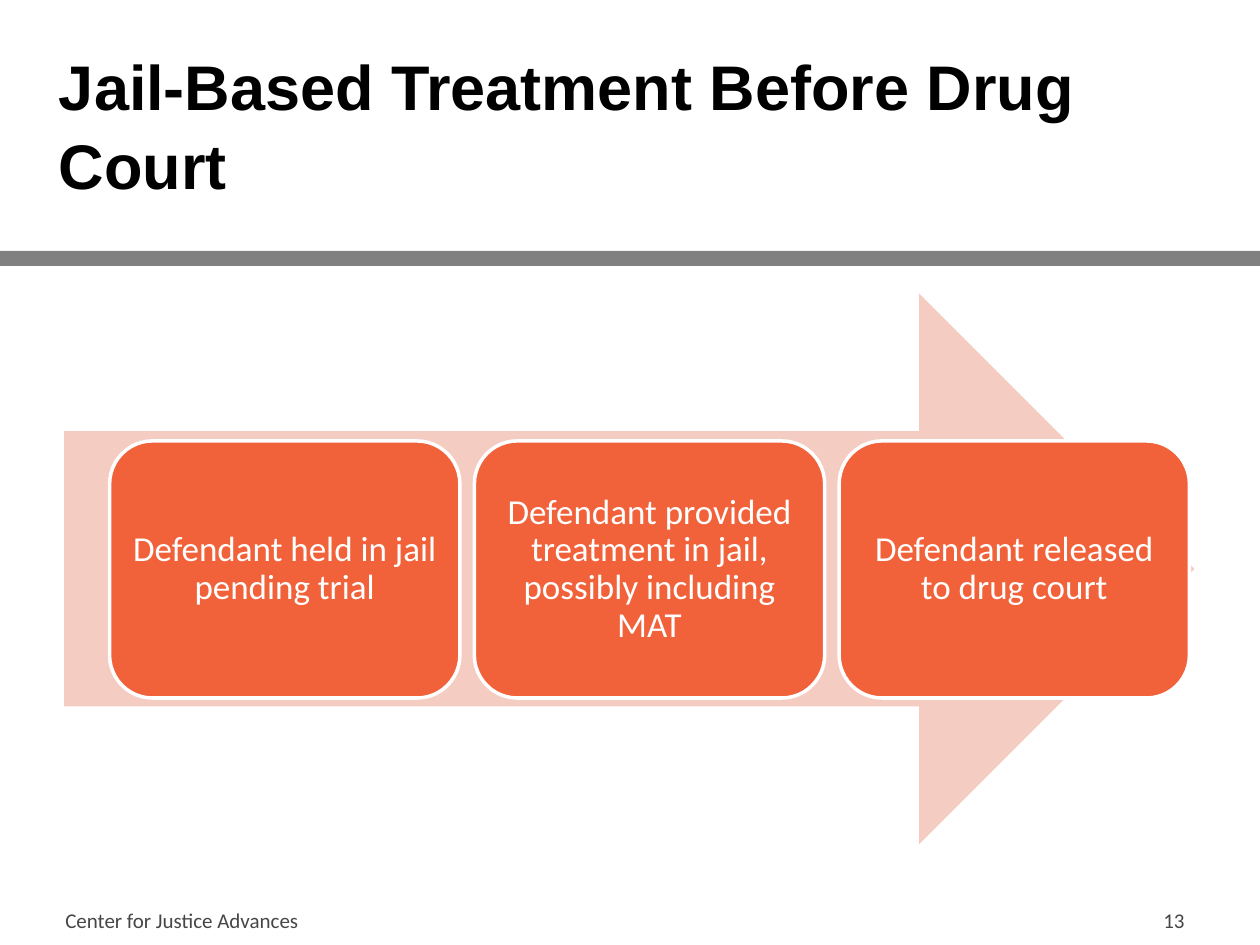
"""Build the slide on jail-based treatment before drug court."""
from pptx import Presentation
from pptx.dml.color import RGBColor
from pptx.enum import shapes, text
from pptx.util import Inches, Pt

BLACK = RGBColor(0x00, 0x00, 0x00)
WHITE = RGBColor(0xFF, 0xFF, 0xFF)
GRAY = RGBColor(0x80, 0x80, 0x80)
DARK = RGBColor(0x46, 0x46, 0x46)
ORANGE = RGBColor(0xF1, 0x62, 0x3A)
PINK = RGBColor(0xF4, 0xCC, 0xC2)

prs = Presentation()
prs.slide_width, prs.slide_height = Inches(10), Inches(7.5)
s = prs.slides.add_slide(prs.slide_layouts[6])


def add_shape(kind, x, y, w, h, fill):
    sp = s.shapes.add_shape(kind, Inches(x), Inches(y), Inches(w), Inches(h))
    sp.shadow.inherit = False
    sp.fill.solid()
    sp.fill.fore_color.rgb = fill
    sp.line.fill.background()
    return sp


def set_text(sp, words, size, color, align, font="Calibri", bold=False):
    tf = sp.text_frame
    tf.text = words
    tf.word_wrap = True
    tf.vertical_anchor = text.MSO_ANCHOR.MIDDLE
    p = tf.paragraphs[0]
    p.alignment = align
    r = p.runs[0]
    r.font.name, r.font.size, r.font.bold = font, Pt(size), bold
    r.font.color.rgb = color
    return tf


add_shape(shapes.MSO_SHAPE.RECTANGLE, 0, 1.99, 10, 0.12, GRAY)

title = s.shapes.add_textbox(Inches(0.37), Inches(0.3), Inches(9.26), Inches(1.45))
tf = set_text(title, "Jail-Based Treatment Before Drug Court", 36, BLACK,
              text.PP_ALIGN.LEFT, "Arial", True)
tf.margin_bottom = Inches(0.14)
tf.paragraphs[0].line_spacing = 1.04

add_shape(shapes.MSO_SHAPE.RIGHT_ARROW, 0.51, 2.33, 8.97, 4.37, PINK)

steps = [
    "Defendant held in jail pending trial",
    "Defendant provided treatment in jail, possibly including MAT",
    "Defendant released to drug court",
]
for i, step in enumerate(steps):
    sp = add_shape(shapes.MSO_SHAPE.ROUNDED_RECTANGLE, 0.87 + i * 2.895, 3.5, 2.78, 2.04, ORANGE)
    sp.line.color.rgb = WHITE
    sp.line.width = Pt(2)
    tf = set_text(sp, step, 20, WHITE, text.PP_ALIGN.CENTER)
    tf.margin_left = tf.margin_right = tf.margin_top = tf.margin_bottom = Inches(0.08)
    tf.paragraphs[0].line_spacing = 0.9

footers = [
    (7.17, 2.33, "13", text.PP_ALIGN.RIGHT),
    (0.42, 3.17, "Center for Justice Advances", text.PP_ALIGN.LEFT),
]
for x, w, words, align in footers:
    sp = s.shapes.add_textbox(Inches(x), Inches(7.1), Inches(w), Inches(0.4))
    set_text(sp, words, 12, DARK, align)

prs.save("out.pptx")
